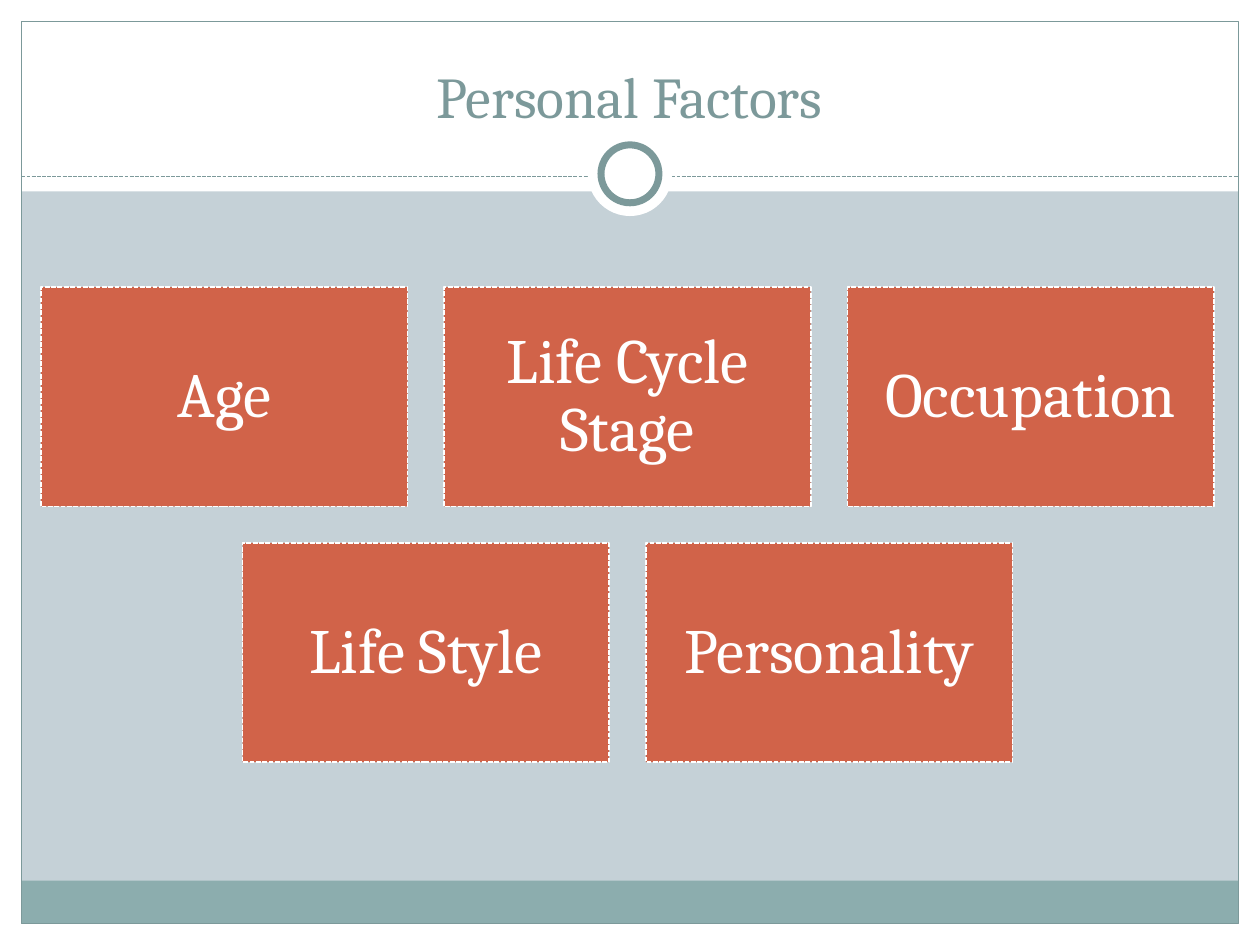
from lxml.etree import SubElement
from pptx import Presentation
from pptx.dml.color import RGBColor
from pptx.enum.dml import MSO_LINE
from pptx.enum.shapes import MSO_CONNECTOR, MSO_SHAPE
from pptx.enum.text import MSO_ANCHOR, PP_ALIGN
from pptx.oxml.ns import qn
from pptx.util import Inches, Pt

# Content
TITLE = "Personal Factors"
FACTOR_ROWS = [
    ["Age", "Life Cycle Stage", "Occupation"],
    ["Life Style", "Personality"],
]

# Format values
WIDTH, HEIGHT = 10, 7.5
MARGIN = 0.17
INNER_WIDTH, INNER_HEIGHT = WIDTH - 2 * MARGIN, HEIGHT - 2 * MARGIN
HEADER_HEIGHT, FOOTER_HEIGHT, RULE_TOP = 1.52, 0.34, 1.4
CARD_WIDTH, CARD_HEIGHT, GAP = 2.91, 1.74, 0.29
GRID_CENTER, GRID_TOP = 4.98, 2.28
BADGE_CENTER = (WIDTH / 2, 1.38)
FONT = "Cambria"
WHITE, SLATE, TEAL, MIST, RUST = "FFFFFF", "7C999A", "8CADAE", "C5D1D7", "D16349"
CARD_FRAME = {"vertical_anchor": MSO_ANCHOR.MIDDLE, "word_wrap": True,
              **{f"margin_{side}": Inches(0.15) for side in ("left", "top", "right", "bottom")}}
TITLE_FRAME = {"vertical_anchor": MSO_ANCHOR.BOTTOM, "word_wrap": True}


def color(hex_string):
    return RGBColor.from_string(hex_string)


def set_line(line, line_color, width, dash=None):
    line.color.rgb = color(line_color)
    line.width = Pt(width)
    if dash is not None:
        line.dash_style = dash


def add_shape(slide, kind, box, fill=None, line=None):
    shape = slide.shapes.add_shape(kind, *map(Inches, box))
    shape.shadow.inherit = False
    if fill:
        shape.fill.solid()
        shape.fill.fore_color.rgb = color(fill)
    else:
        shape.fill.background()
    if line:
        set_line(shape.line, *line)
    else:
        shape.line.fill.background()
    return shape


def write(shape, text, size, text_color, frame_format, line_spacing=1.0):
    frame = shape.text_frame
    for name, value in frame_format.items():
        setattr(frame, name, value)
    frame.text = text
    paragraph = frame.paragraphs[0]
    paragraph.alignment = PP_ALIGN.CENTER
    paragraph.line_spacing = line_spacing
    font = paragraph.runs[0].font
    font.name, font.size = FONT, Pt(size)
    font.color.rgb = color(text_color)


def add_circle(slide, diameter, line=None):
    x, y = BADGE_CENTER
    box = (x - diameter / 2, y - diameter / 2, diameter, diameter)
    add_shape(slide, MSO_SHAPE.OVAL, box, WHITE, line)


def add_frame(slide):
    # White edges, header and footer band
    bands = [
        ((0, HEIGHT - MARGIN, WIDTH, MARGIN), WHITE),
        ((0, 0, WIDTH, HEADER_HEIGHT), WHITE),
        ((0, 0, MARGIN, HEIGHT), WHITE),
        ((WIDTH - MARGIN, 0, MARGIN, HEIGHT), WHITE),
        ((MARGIN, HEIGHT - MARGIN - FOOTER_HEIGHT, INNER_WIDTH, FOOTER_HEIGHT), TEAL),
    ]
    for box, fill in bands:
        add_shape(slide, MSO_SHAPE.RECTANGLE, box, fill)
    add_shape(slide, MSO_SHAPE.RECTANGLE, (MARGIN, MARGIN, INNER_WIDTH, INNER_HEIGHT),
              line=(SLATE, 0.75))

    # Dashed rule with the ring on its middle
    ends = (MARGIN, RULE_TOP, WIDTH - MARGIN, RULE_TOP)
    rule = slide.shapes.add_connector(MSO_CONNECTOR.STRAIGHT, *map(Inches, ends))
    set_line(rule.line, SLATE, 0.75, MSO_LINE.SQUARE_DOT)
    SubElement(rule.element.spPr, qn("a:effectLst"))
    add_circle(slide, 0.67)
    add_circle(slide, 0.46, (SLATE, 4))


def add_title(slide):
    title = slide.shapes.title
    slide.shapes.element.append(title.element)  # in front of the header band
    box = {"left": 0.33, "top": 0.25, "width": 9.33, "height": 0.83}
    for name, value in box.items():
        setattr(title, name, Inches(value))
    write(title, TITLE, 33, SLATE, TITLE_FRAME)


def add_cards(slide):
    # Each row is centred on the same axis
    for row, factors in enumerate(FACTOR_ROWS):
        row_width = len(factors) * (CARD_WIDTH + GAP) - GAP
        top = GRID_TOP + row * (CARD_HEIGHT + GAP)
        for column, factor in enumerate(factors):
            left = GRID_CENTER - row_width / 2 + column * (CARD_WIDTH + GAP)
            card = add_shape(slide, MSO_SHAPE.RECTANGLE, (left, top, CARD_WIDTH, CARD_HEIGHT),
                             RUST, (WHITE, 0.9, MSO_LINE.SQUARE_DOT))
            write(card, factor, 36, WHITE, CARD_FRAME, 0.9)


def main():
    presentation = Presentation()
    presentation.slide_width, presentation.slide_height = Inches(WIDTH), Inches(HEIGHT)
    slide = presentation.slides.add_slide(presentation.slide_layouts[5])
    slide.background.fill.solid()
    slide.background.fill.fore_color.rgb = color(MIST)
    add_frame(slide)
    add_title(slide)
    add_cards(slide)
    presentation.save("out.pptx")


if __name__ == "__main__":
    main()
